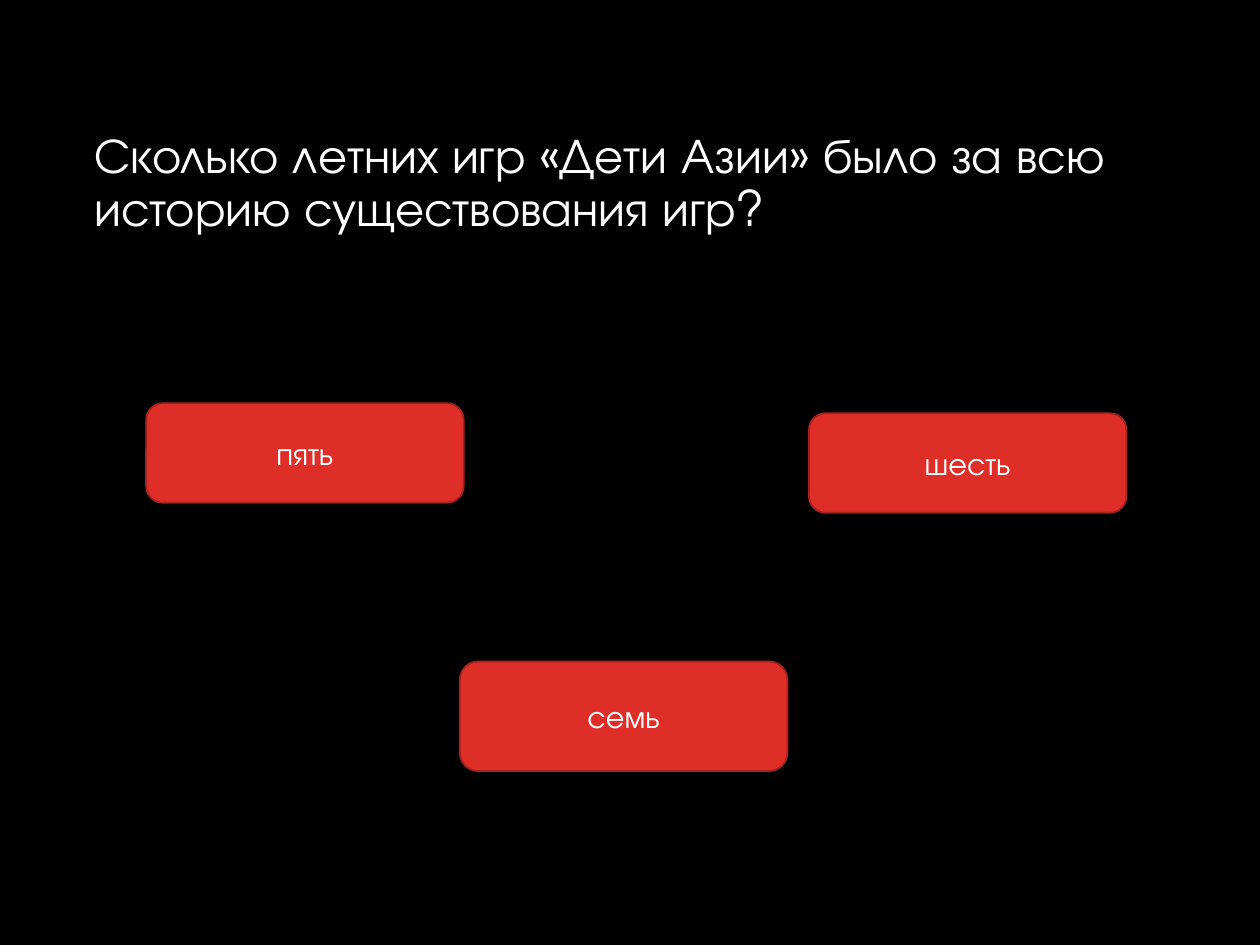
"""Build a quiz slide with one question and three answer buttons."""
import pptx
import pptx.dml.color
import pptx.enum.shapes
import pptx.enum.text
import pptx.util

Inches = pptx.util.Inches
COLORS = {"background": "000000", "text": "FFFFFF", "button": "DF2E28", "border": "A5221E"}
FONT = "TeX Gyre Adventor"
QUESTION = "Сколько летних игр «Дети Азии» было за всю историю существования игр?"
QUESTION_AREA = (0.65, 0.99, 8.7, 5.86)
ANSWERS = [
    ("пять", (1.16, 3.2, 2.52, 0.79)),
    ("шесть", (6.42, 3.28, 2.52, 0.79)),
    ("семь", (3.65, 5.25, 2.6, 0.87)),
]
QUESTION_FORMAT = {"alignment": pptx.enum.text.PP_ALIGN.LEFT, "line_spacing": 0.9}
ANSWER_FORMAT = {"alignment": pptx.enum.text.PP_ALIGN.CENTER}


def color(name):
    return pptx.dml.color.RGBColor.from_string(COLORS[name])


def paint(fill, name):
    fill.solid()
    fill.fore_color.rgb = color(name)


def write(shape, text, size, anchor, paragraph_format):
    frame = shape.text_frame
    frame.word_wrap = True
    frame.vertical_anchor = anchor
    para = frame.paragraphs[0]
    for name, value in paragraph_format.items():
        setattr(para, name, value)
    span = para.add_run()
    span.text = text
    for name, value in {"name": FONT, "size": pptx.util.Pt(size)}.items():
        setattr(span.font, name, value)
    span.font.color.rgb = color("text")


def add_answer(page, text, area):
    button = page.shapes.add_shape(
        pptx.enum.shapes.MSO_SHAPE.ROUNDED_RECTANGLE, *map(Inches, area))
    button.shadow.inherit = False
    paint(button.fill, "button")
    paint(button.line.fill, "border")
    button.line.width = pptx.util.Pt(1)
    write(button, text, 18, pptx.enum.text.MSO_ANCHOR.MIDDLE, ANSWER_FORMAT)


def main():
    deck = pptx.Presentation()
    deck.slide_width, deck.slide_height = Inches(10), Inches(7.5)
    page = deck.slides.add_slide(deck.slide_layouts[6])
    paint(page.background.fill, "background")
    box = page.shapes.add_textbox(*map(Inches, QUESTION_AREA))
    write(box, QUESTION, 28, pptx.enum.text.MSO_ANCHOR.TOP, QUESTION_FORMAT)
    for text, area in ANSWERS:
        add_answer(page, text, area)
    deck.save("out.pptx")


if __name__ == "__main__":
    main()
